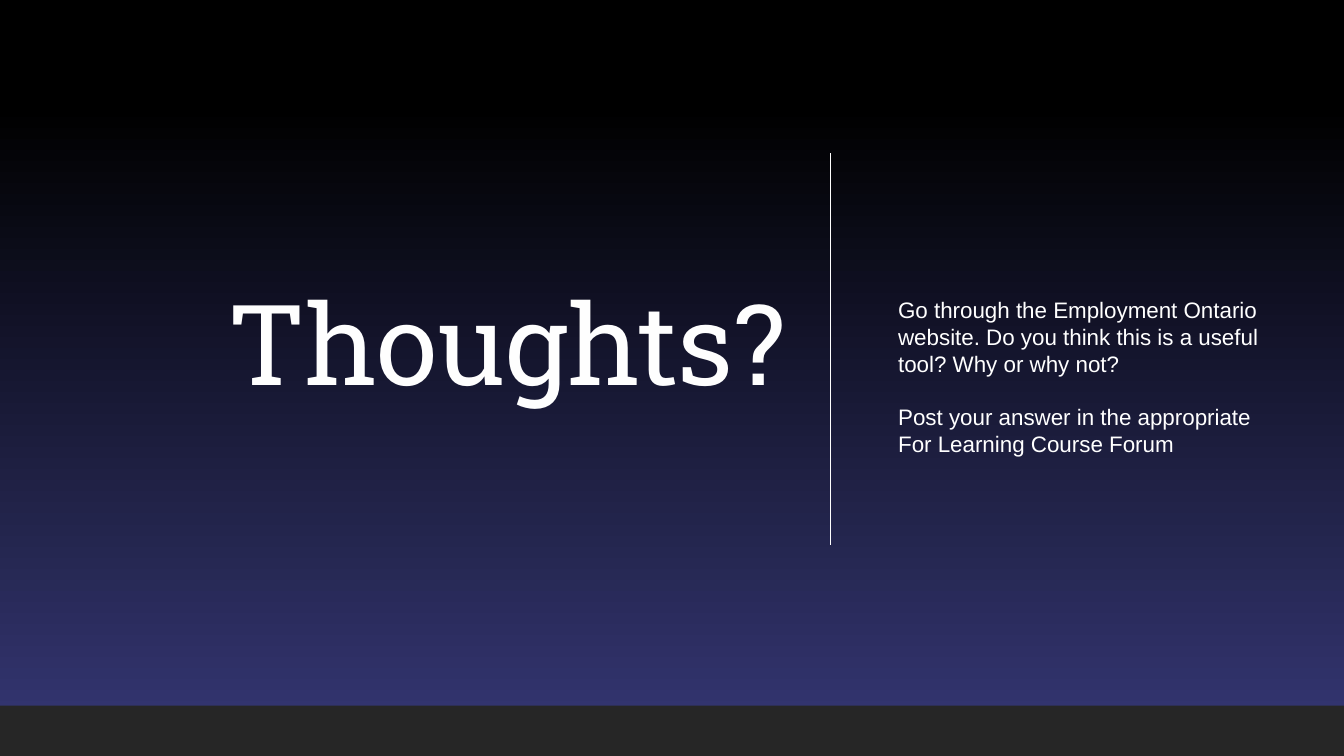
from pptx import Presentation
from pptx.dml.color import RGBColor
from pptx.enum.shapes import MSO_CONNECTOR, MSO_SHAPE
from pptx.enum.text import MSO_ANCHOR, PP_ALIGN
from pptx.oxml.ns import qn
from pptx.util import Inches, Pt
from lxml.etree import SubElement


def color(hex_code):
    return RGBColor.from_string(hex_code)


def add_text(slide, box, paragraphs, hex_code, font_format, paragraph_format, anchor):
    shape = slide.shapes.add_textbox(*map(Inches, box))
    frame = shape.text_frame
    frame.word_wrap = True
    frame.vertical_anchor = anchor
    for index, text in enumerate(paragraphs):
        paragraph = frame.paragraphs[0] if index == 0 else frame.add_paragraph()
        for name, value in paragraph_format.items():
            setattr(paragraph, name, value)
        if index:
            paragraph.space_before = Pt(19)
        run = paragraph.add_run()
        run.text = text
        run.font.color.rgb = color(hex_code)
        for name, value in font_format.items():
            setattr(run.font, name, value)


presentation = Presentation()
presentation.slide_width = Inches(13.33)
presentation.slide_height = Inches(7.5)
slide = presentation.slides.add_slide(presentation.slide_layouts[6])

# Full-slide backdrop and footer band
backdrop, footer = [
    slide.shapes.add_shape(
        MSO_SHAPE.RECTANGLE, 0, Inches(top), presentation.slide_width, Inches(height)
    )
    for top, height in [(0, 7.5), (7, 0.5)]
]
for band in (backdrop, footer):
    band.shadow.inherit = False
    band.line.fill.background()
footer.fill.solid()
footer.fill.fore_color.rgb = color("262626")

# Indigo at the bottom fading to black
for fill in (slide.background.fill, backdrop.fill):
    fill.gradient()
    fill.gradient_angle = 90
    for stop, (position, hex_code) in zip(
        fill.gradient_stops, [(0, "363876"), (0.86, "000000")]
    ):
        stop.position = position
        stop.color.rgb = color(hex_code)

# Title
add_text(
    slide, (1.06, 0.7, 6.84, 5.53), ["Thoughts?"], "FEFEFE",
    {"name": "Roboto Slab", "size": Pt(80)},
    {"alignment": PP_ALIGN.RIGHT, "line_spacing": 0.9},
    MSO_ANCHOR.MIDDLE,
)

# Divider
divider = slide.shapes.add_connector(
    MSO_CONNECTOR.STRAIGHT, Inches(8.24), Inches(1.52), Inches(8.24), Inches(5.41)
)
divider.line.color.rgb = color("FEFEFE")
divider.line.width = Pt(1)
SubElement(divider._element.spPr, qn("a:effectLst"))

# Question and instruction
add_text(
    slide, (8.81, 2.89, 3.8, 1.72),
    [
        "Go through the Employment Ontario website. "
        "Do you think this is a useful tool? Why or why not?",
        "Post your answer in the appropriate For Learning Course Forum",
    ],
    "FFFFFF",
    {"name": "Arial", "size": Pt(16)},
    {"alignment": PP_ALIGN.LEFT, "line_spacing": 1.0},
    MSO_ANCHOR.TOP,
)

presentation.save("out.pptx")
